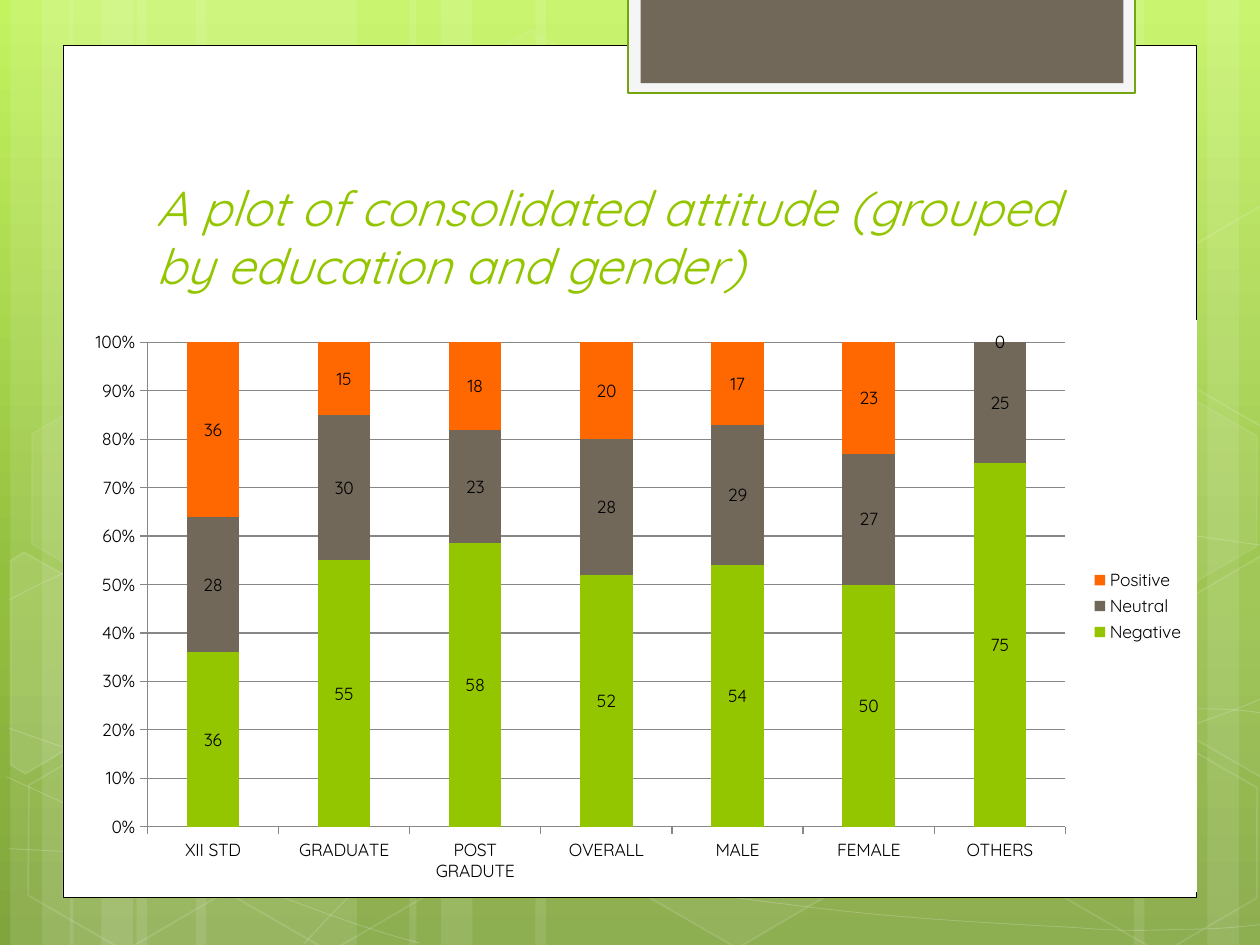
from math import cos, radians, sin

from lxml.etree import SubElement
from pptx import Presentation
from pptx.chart.data import CategoryChartData
from pptx.dml.color import RGBColor
from pptx.enum.chart import XL_CHART_TYPE, XL_LABEL_POSITION, XL_LEGEND_POSITION, XL_TICK_MARK
from pptx.enum.shapes import MSO_SHAPE
from pptx.enum.text import MSO_ANCHOR, MSO_AUTO_SIZE, PP_ALIGN
from pptx.oxml import parse_xml
from pptx.oxml.ns import nsdecls, qn
from pptx.util import Pt

THEME = {
    "font": "Quicksand", "title_size": 28, "chart_size": 10,
    "white": "FFFFFF", "black": "000000", "tab": "F5F5F5", "grid": "878787",
    "green": "94C600", "dark_green": "74A510", "brown": "71685A", "orange": "FF6700",
    "gradient": [(0, "C3F35F"), (62, "93BF3F"), (100, "81A53E")],
}

TITLE = "A plot of consolidated attitude (grouped by education and gender)"
CATEGORIES = ["XII STD", "GRADUATE", "POST GRADUTE", "OVERALL", "MALE", "FEMALE", "OTHERS"]
SERIES = [
    ("Negative", [36, 55, 58, 52, 54, 50, 75], "green"),
    ("Neutral", [28, 30, 23, 28, 29, 27, 25], "brown"),
    ("Positive", [36, 15, 18, 20, 17, 23, 0], "orange"),
]

# Backdrop, in points
STRIPES = [(78, 126), (6, 36), (24, 60), (112, 126), (40, 36), (58, 60),
           (528, 126), (690, 36), (648, 60), (306, 222), (234, 36), (252, 60)]  # left, width
# Start point, then cubic segments: two control points and an end point
CURVES = [
    [(5, 485), (44, 487), (83, 489), (137, 488), (191, 487), (258, 486), (330, 479),
     (402, 472), (504, 458), (570, 444), (636, 430), (703, 409), (725, 397)],
    [(5, 343), (26, 332), (47, 321), (87, 310), (128, 300), (186, 284), (250, 279),
     (314, 274), (392, 273), (471, 279), (550, 284), (682, 307), (725, 312)],
    [(4, 444), (91, 484), (178, 523), (240, 539)],
    [(5, 416), (27, 424), (50, 432), (92, 444), (134, 454), (197, 472), (257, 485),
     (317, 497), (392, 510), (452, 517), (512, 525), (576, 528), (614, 530),
     (652, 533), (662, 531), (680, 531), (699, 531), (712, 529), (725, 528)],
    [(174, 539), (187, 525), (200, 510), (217, 498), (235, 485), (259, 470), (279, 460),
     (300, 450), (312, 446), (338, 438), (364, 431), (413, 421), (438, 416),
     (463, 411), (467, 411), (490, 410), (512, 408), (547, 405), (572, 405),
     (597, 404), (638, 405), (638, 405), (654, 405), (670, 405), (686, 405),
     (699, 405), (711, 406), (718, 407), (724, 408), (722, 407), (724, 408)],
]
TILT = 30
HEXAGONS = [  # left, top, fill opacity, line opacity
    (240.5, 26, 4, 8), (358, 424, 6, 12), (8, 425.5, 0, 12), (10, 224.6, 7, 8),
    (125.3, 426, 0, 12), (542, 326, 10, 12), (600.5, 427, 0, 12), (600.5, 226, 7, 8),
]
CUT_HEXAGONS = [  # fill opacity, centre of tilt, corners as they appear when tilted
    (10, (25.9, 385.2), [(6, 320.4), (13.7, 315.4), (69.1, 347), (68.4, 410.4),
                         (14.4, 442.1), (6, 437)]),
    (4, (709.2, 374.4), [(666.7, 349.2), (720.7, 317.5), (726.5, 321.1), (726.5, 441.4),
                         (721.4, 444.2), (666.7, 412.6)]),
    (0, (709.2, 173.5), [(666.7, 149), (720.7, 117.4), (727.2, 121), (726.5, 241.2),
                         (721.4, 244.1), (666.7, 212.4)]),
]
FRAMES = [  # left, top, width, height, fill, line, line width
    (36, 25.9, 648, 487.2, "white", "black", 0.5),
    (359, -1.5, 289.7, 54.8, "tab", "dark_green", 1.25),
    (366.1, -1.5, 275.9, 49, "brown", None, 0),
]
TITLE_BOX = (82, 82, 553, 90)
CHART_BOX = (41.8, 182.9, 642.2, 326.9)
PLOT_AREA = {"x": 0.066, "y": 0.039, "w": 0.817, "h": 0.847}


def color(name):
    return RGBColor.from_string(THEME[name])


def box(values):
    return [Pt(value) for value in values]


def paint(shape, fill=None, line=None, width=1, fill_opacity=100, line_opacity=100):
    shape.shadow.inherit = False
    if fill and fill_opacity:
        shape.fill.solid()
        shape.fill.fore_color.rgb = color(fill)
    else:
        shape.fill.background()
    if line:
        shape.line.color.rgb = color(line)
        shape.line.width = Pt(width)
    else:
        shape.line.fill.background()
    for query, opacity in (("./a:solidFill/a:srgbClr", fill_opacity),
                           ("./a:ln/a:solidFill/a:srgbClr", line_opacity)):
        for node in shape.element.spPr.xpath(query):
            if opacity < 100:
                SubElement(node, qn("a:alpha"), val=str(opacity * 1000))


def add_outline(slide, points, close):
    start, *rest = [box(point) for point in points]
    builder = slide.shapes.build_freeform(*start)
    builder.add_line_segments(rest, close=close)
    return builder.convert_to_shape()


def add_curve(slide, points):
    """Draw the control polygon, then join every three of its lines into one cubic."""
    shape = add_outline(slide, points, False)
    outline = shape.element.xpath(".//a:path")[0]
    lines = outline.xpath("./a:lnTo")
    for index in range(0, len(lines), 3):
        cubic = SubElement(outline, qn("a:cubicBezTo"))
        for line in lines[index:index + 3]:
            cubic.append(line[0])
            outline.remove(line)
    return shape


def untilt(point, centre):
    dx, dy = point[0] - centre[0], point[1] - centre[1]
    cosine, sine = cos(radians(TILT)), sin(radians(TILT))
    return centre[0] + cosine * dx + sine * dy, centre[1] - sine * dx + cosine * dy


def add_backdrop(slide):
    fill = slide.background.fill
    fill.gradient()
    fill.gradient_angle = 270
    stops = slide.element.xpath(".//a:gsLst")[0]
    stops.clear()
    for position, value in THEME["gradient"]:
        stop = SubElement(stops, qn("a:gs"), pos=str(position * 1000))
        SubElement(stop, qn("a:srgbClr"), val=value)

    for left, width in STRIPES:
        stripe = slide.shapes.add_shape(MSO_SHAPE.RECTANGLE, *box((left, 0, width, 540)))
        paint(stripe, "white", fill_opacity=10)
    for curve in CURVES:
        paint(add_curve(slide, curve), None, "white", 0.5, line_opacity=20)
    for left, top, fill_opacity, line_opacity in HEXAGONS:
        hexagon = slide.shapes.add_shape(MSO_SHAPE.HEXAGON, *box((left, top, 126, 109.4)))
        hexagon.adjustments[0] = 0.285
        hexagon.rotation = TILT
        paint(hexagon, "white", "white", 1, fill_opacity, line_opacity)
    for fill_opacity, centre, corners in CUT_HEXAGONS:
        hexagon = add_outline(slide, [untilt(corner, centre) for corner in corners], True)
        hexagon.rotation = TILT
        paint(hexagon, "white", "white", 1, fill_opacity, 12)
    for *bounds, fill_name, line_name, width in FRAMES:
        frame = slide.shapes.add_shape(MSO_SHAPE.RECTANGLE, *box(bounds))
        paint(frame, fill_name, line_name, width)


def set_title(slide):
    title = slide.shapes.title
    title.left, title.top, title.width, title.height = box(TITLE_BOX)
    title.element.getparent().append(title.element)  # in front of the panel
    frame = title.text_frame
    frame.text = TITLE
    frame.word_wrap = True
    frame.auto_size = MSO_AUTO_SIZE.NONE
    frame.vertical_anchor = MSO_ANCHOR.BOTTOM
    paragraph = frame.paragraphs[0]
    paragraph.alignment = PP_ALIGN.LEFT
    font = paragraph.font
    font.name, font.size, font.italic = THEME["font"], Pt(THEME["title_size"]), True
    font.color.rgb = color("green")


def add_attitude_chart(slide):
    data = CategoryChartData()
    data.categories = CATEGORIES
    for name, values, _ in SERIES:
        data.add_series(name, values)
    chart = slide.shapes.add_chart(XL_CHART_TYPE.COLUMN_STACKED_100, *box(CHART_BOX), data).chart
    chart.has_title = False
    chart.font.name, chart.font.size = THEME["font"], Pt(THEME["chart_size"])
    chart.font.color.rgb = color("black")
    chart.has_legend = True
    chart.legend.position = XL_LEGEND_POSITION.RIGHT
    chart.legend.include_in_layout = False

    plot = chart.plots[0]
    plot.gap_width, plot.overlap, plot.vary_by_categories = 150, 100, False
    for series, (_, _, fill_name) in zip(plot.series, SERIES):
        series.format.fill.solid()
        series.format.fill.fore_color.rgb = color(fill_name)
        series.data_labels.show_value = True
        series.data_labels.position = XL_LABEL_POSITION.CENTER

    value_axis = chart.value_axis
    value_axis.has_major_gridlines = True
    value_axis.tick_labels.number_format = "0%"
    value_axis.tick_labels.number_format_is_linked = False
    for axis in (value_axis, chart.category_axis):
        axis.major_tick_mark = XL_TICK_MARK.OUTSIDE
    for part in (value_axis, chart.category_axis, value_axis.major_gridlines):
        part.format.line.color.rgb = color("grid")
        part.format.line.width = Pt(0.75)

    chart_space = chart.element
    for layout in chart_space.xpath("./c:chart/c:plotArea/c:layout"):
        layout.getparent().remove(layout)
    sizes = "".join(f'<c:{key} val="{value}"/>' for key, value in PLOT_AREA.items())
    chart_space.xpath("./c:chart/c:plotArea")[0].insert(0, parse_xml(
        f'<c:layout {nsdecls("c")}><c:manualLayout><c:layoutTarget val="inner"/>'
        f'<c:xMode val="edge"/><c:yMode val="edge"/>{sizes}</c:manualLayout></c:layout>'))
    chart_space.xpath("./c:chart")[0].addnext(parse_xml(
        f'<c:spPr {nsdecls("c", "a")}><a:solidFill><a:srgbClr val="{THEME["white"]}"/>'
        '</a:solidFill><a:ln><a:noFill/></a:ln></c:spPr>'))


def main():
    presentation = Presentation()
    presentation.slide_width, presentation.slide_height = Pt(720), Pt(540)
    slide = presentation.slides.add_slide(presentation.slide_layouts[5])
    add_backdrop(slide)
    set_title(slide)
    add_attitude_chart(slide)
    presentation.save("out.pptx")


if __name__ == "__main__":
    main()
